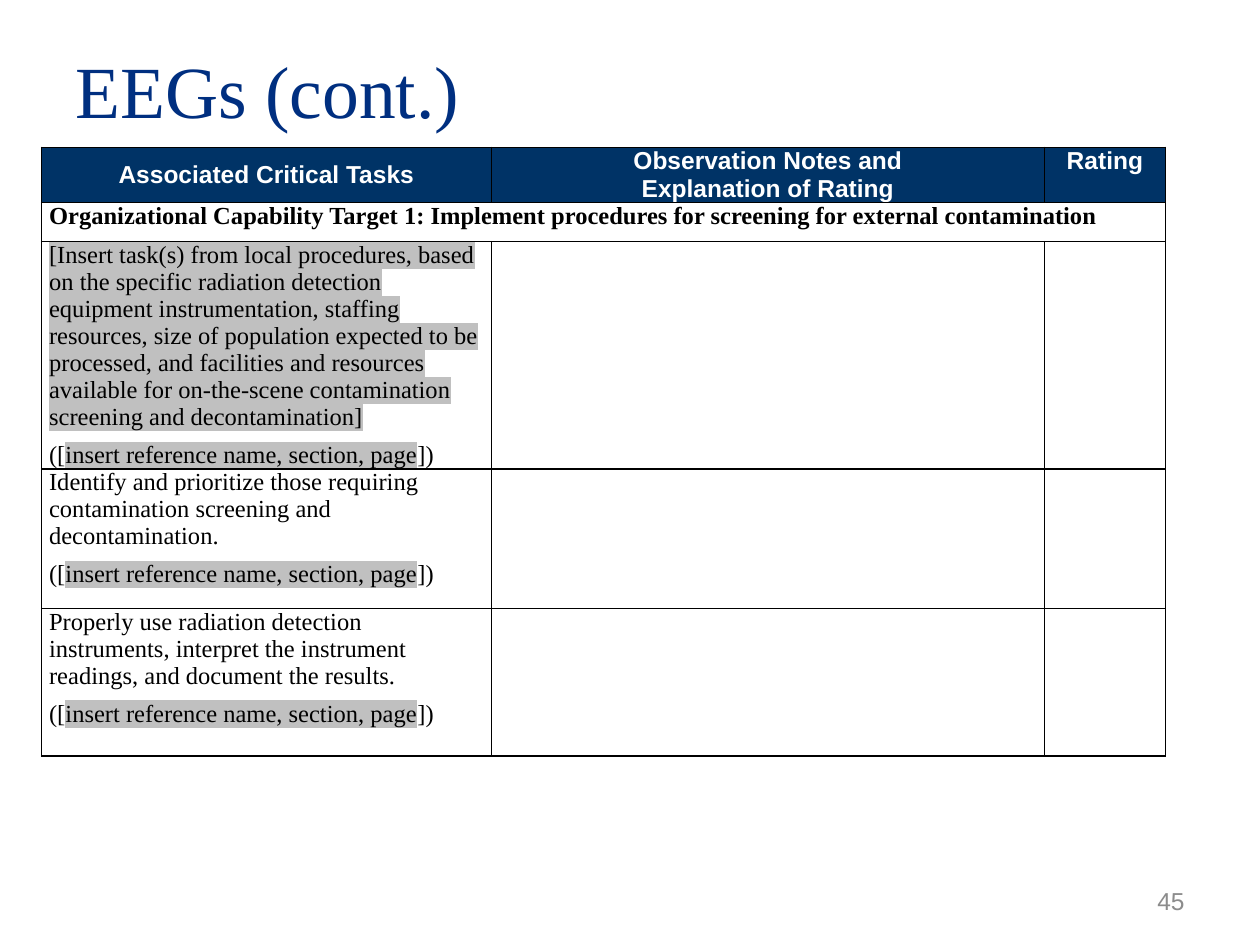
from dataclasses import dataclass

from lxml import etree
from pptx import Presentation
from pptx import util as u
from pptx.dml.color import RGBColor
from pptx.enum import text as t
from pptx.oxml import ns

SERIF, SANS = "Times New Roman", "Arial"
NAVY, TITLE_BLUE, HIGHLIGHT = "003366", "002F80", "C0C0C0"
BLACK, WHITE, GRAY = "000000", "FFFFFF", "8C8C8C"

COLUMN_WIDTHS = [3.57, 4.39, 0.96]
ROW_HEIGHTS = [0.39, 0.31, 1.66, 1.11, 1.17]
HEADERS = [
    ["Associated Critical Tasks"],
    ["Observation Notes and", "Explanation of Rating"],
    ["Rating"],
]
TARGET = ("Organizational Capability Target 1: Implement procedures for "
          "screening for external contamination")
REFERENCE = "insert reference name, section, page"


@dataclass
class Task:
    text: str
    highlight: str | None = None


TASKS = [
    Task("[Insert task(s) from local procedures, based on the specific radiation "
         "detection equipment instrumentation, staffing resources, size of "
         "population expected to be processed, and facilities and resources "
         "available for on-the-scene contamination screening and decontamination]",
         HIGHLIGHT),
    Task("Identify and prioritize those requiring contamination screening and "
         "decontamination."),
    Task("Properly use radiation detection instruments, interpret the instrument "
         "readings, and document the results."),
]


def color(value: str) -> RGBColor:
    return RGBColor.from_string(value)


def add_color_fill(parent, tag: str, value: str):
    """Append an XML element that holds one RGB colour."""
    element = etree.SubElement(parent, ns.qn(tag))
    etree.SubElement(element, ns.qn("a:srgbClr"), val=value)
    return element


def add_text(paragraph, text: str, *, size: float = 14, font: str = SERIF,
             fill: str = BLACK, bold: bool = False, highlight: str | None = None,
             align=t.PP_ALIGN.LEFT) -> None:
    paragraph.alignment = align
    run = paragraph.add_run()
    run.text = text
    run.font.size = u.Pt(size)
    run.font.name = font
    run.font.bold = bold
    run.font.color.rgb = color(fill)
    if highlight:
        properties = run.font._element
        mark = add_color_fill(properties, "a:highlight", highlight)
        properties.find(ns.qn("a:solidFill")).addnext(mark)


def format_cell(cell, fill: str | None = None) -> None:
    """Set the margins, black borders and fill of a table cell."""
    cell.margin_left = cell.margin_right = u.Inches(0.06)
    cell.margin_top = cell.margin_bottom = 0
    properties = cell._tc.get_or_add_tcPr()
    for side in ("a:lnL", "a:lnR", "a:lnT", "a:lnB"):
        line = etree.SubElement(properties, ns.qn(side), w=str(u.Pt(1)))
        add_color_fill(line, "a:solidFill", BLACK)
    if fill:
        cell.fill.solid()
        cell.fill.fore_color.rgb = color(fill)
    else:
        cell.fill.background()


def write_task(cell, task: Task) -> None:
    """Write a task followed by its reference line."""
    description = cell.text_frame.paragraphs[0]
    description.space_after = u.Pt(3)
    add_text(description, task.text, highlight=task.highlight)
    reference = cell.text_frame.add_paragraph()
    reference.space_before = reference.space_after = u.Pt(3)
    add_text(reference, "([")
    add_text(reference, REFERENCE, highlight=HIGHLIGHT)
    add_text(reference, "])")


def add_task_table(slide) -> None:
    frame = slide.shapes.add_table(
        len(ROW_HEIGHTS), len(COLUMN_WIDTHS), u.Inches(0.33), u.Inches(1.17),
        u.Inches(sum(COLUMN_WIDTHS)), u.Inches(sum(ROW_HEIGHTS)))
    table = frame.table
    table.first_row = table.horz_banding = False
    for column, width in zip(table.columns, COLUMN_WIDTHS):
        column.width = u.Inches(width)
    for row, height in zip(table.rows, ROW_HEIGHTS):
        row.height = u.Inches(height)
    for index, row in enumerate(table.rows):
        for cell in row.cells:
            format_cell(cell, NAVY if index == 0 else None)

    # Header row
    for index, lines in enumerate(HEADERS):
        cell = table.cell(0, index)
        if index < 2:
            cell.vertical_anchor = t.MSO_ANCHOR.MIDDLE
        for number, line in enumerate(lines):
            text_frame = cell.text_frame
            paragraph = text_frame.add_paragraph() if number else text_frame.paragraphs[0]
            add_text(paragraph, line, font=SANS, fill=WHITE, bold=True,
                     align=t.PP_ALIGN.CENTER)

    # Target row across all columns
    target = table.cell(1, 0)
    target.merge(table.cell(1, len(COLUMN_WIDTHS) - 1))
    add_text(target.text_frame.paragraphs[0], TARGET, bold=True)

    # Task rows
    for index, task in enumerate(TASKS, start=2):
        write_task(table.cell(index, 0), task)


def main() -> None:
    presentation = Presentation()
    presentation.slide_width, presentation.slide_height = u.Inches(10), u.Inches(7.5)
    slide = presentation.slides.add_slide(presentation.slide_layouts[5])

    # Title
    title = slide.shapes.title
    title.left, title.top = u.Inches(0.5), u.Inches(0.08)
    title.width, title.height = u.Inches(9), u.Inches(1.25)
    title.text_frame.vertical_anchor = t.MSO_ANCHOR.MIDDLE
    add_text(title.text_frame.paragraphs[0], "EEGs (cont.)", size=42, fill=TITLE_BLUE)

    add_task_table(slide)

    # Page number
    number = slide.shapes.add_textbox(u.Inches(7.17), u.Inches(6.95),
                                      u.Inches(2.33), u.Inches(0.4))
    number.text_frame.word_wrap = True
    number.text_frame.vertical_anchor = t.MSO_ANCHOR.MIDDLE
    add_text(number.text_frame.paragraphs[0], "45", font=SANS, fill=GRAY,
             align=t.PP_ALIGN.RIGHT)

    presentation.save("out.pptx")


if __name__ == "__main__":
    main()
